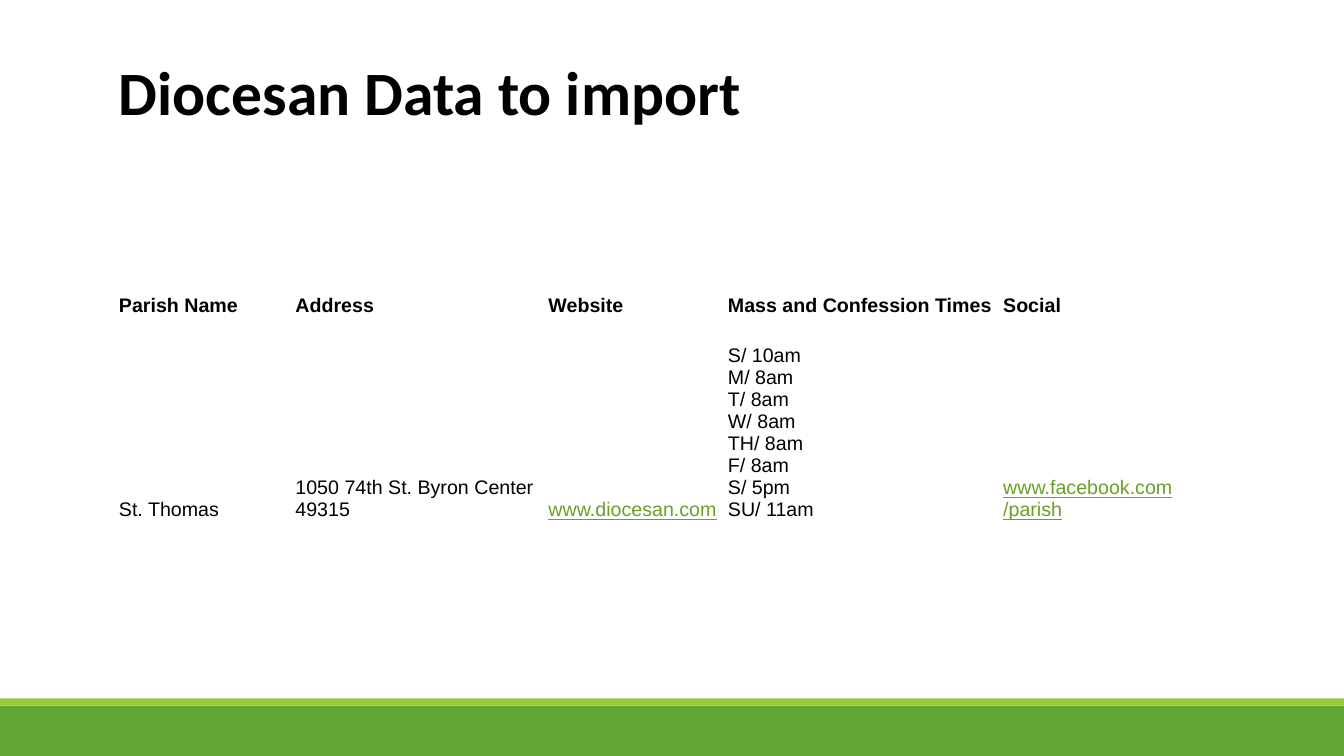
from pptx import Presentation
from pptx.dml.color import RGBColor
from pptx.enum.shapes import MSO_SHAPE
from pptx.enum.text import MSO_ANCHOR
from pptx.util import Inches, Pt

RECTANGLE = MSO_SHAPE.RECTANGLE
TOP, BOTTOM = MSO_ANCHOR.TOP, MSO_ANCHOR.BOTTOM

COLORS = {"text": "000000", "link": "6B9F25", "band": "63A537", "stripe": "99CB38"}

TITLE = "Diocesan Data to import"
MASS_TIMES = ["S/ 10am", "M/ 8am", "T/ 8am", "W/ 8am", "TH/ 8am", "F/ 8am", "S/ 5pm", "SU/ 11am"]
PARISHES = [
    ["Parish Name", "Address", "Website", "Mass and Confession Times", "Social", ""],
    ["St. Thomas", "1050 74th St. Byron Center 49315", "www.diocesan.com",
     "\v".join(MASS_TIMES), "www.facebook.com/parish", ""],
]
COLUMN_WIDTHS = [1.75, 2.51, 1.78, 2.73, 1.75, 1.05]
ROW_HEIGHTS = [0.33, 2.03]
FOOTER = [("band", 7, 0.5), ("stripe", 6.93, 0.07)]

TITLE_FONT = {"name": "Calibri", "size": Pt(44), "bold": True}
HEADER_FONT = {"name": "Arial", "size": Pt(14), "bold": True}
BODY_FONT = {**HEADER_FONT, "bold": False}
LINK_FONT = {**BODY_FONT, "underline": True}
TITLE_FRAME = {"word_wrap": True, "vertical_anchor": TOP}
CELL_FORMAT = {
    "vertical_anchor": BOTTOM, "margin_left": Inches(0.01), "margin_right": Inches(0.01),
    "margin_top": Inches(0.01), "margin_bottom": 0,
}
TABLE_FORMAT = {"first_row": False, "horz_banding": False}


def apply(target, values):
    for name, value in values.items():
        setattr(target, name, value)


def color(name):
    return RGBColor.from_string(COLORS[name])


def write(paragraph, text, font, color_name="text"):
    paragraph.text = text
    for run in paragraph.runs:
        apply(run.font, font)
        run.font.color.rgb = color(color_name)


def add_footer(slide, width):
    for name, top, height in FOOTER:
        strip = slide.shapes.add_shape(RECTANGLE, 0, Inches(top), width, Inches(height))
        strip.shadow.inherit = False
        strip.fill.solid()
        strip.fill.fore_color.rgb = color(name)
        strip.line.fill.background()


def add_title(slide):
    frame = slide.shapes.add_textbox(Inches(1.08), Inches(0.57), Inches(11.5), Inches(1.45)).text_frame
    apply(frame, TITLE_FRAME)
    heading = frame.paragraphs[0]
    heading.line_spacing = 0.9
    write(heading, TITLE, TITLE_FONT)


def add_parishes(slide):
    parishes = slide.shapes.add_table(
        len(ROW_HEIGHTS), len(COLUMN_WIDTHS), Inches(1.17), Inches(2.81),
        Inches(sum(COLUMN_WIDTHS)), Inches(sum(ROW_HEIGHTS))).table
    apply(parishes, TABLE_FORMAT)
    for column, width in zip(parishes.columns, COLUMN_WIDTHS):
        column.width = Inches(width)
    for row_index, (row, height, entries) in enumerate(zip(parishes.rows, ROW_HEIGHTS, PARISHES)):
        row.height = Inches(height)
        for cell, entry in zip(row.cells, entries):
            apply(cell, CELL_FORMAT)
            cell.fill.background()
            paragraph = cell.text_frame.paragraphs[0]
            if entry.startswith("www."):
                write(paragraph, entry, LINK_FONT, "link")
            else:
                write(paragraph, entry, BODY_FONT if row_index else HEADER_FONT)


def main():
    deck = Presentation()
    deck.slide_width, deck.slide_height = Inches(13.33), Inches(7.5)
    slide = deck.slides.add_slide(deck.slide_layouts[6])
    add_footer(slide, deck.slide_width)
    add_title(slide)
    add_parishes(slide)
    deck.save("out.pptx")


if __name__ == "__main__":
    main()
